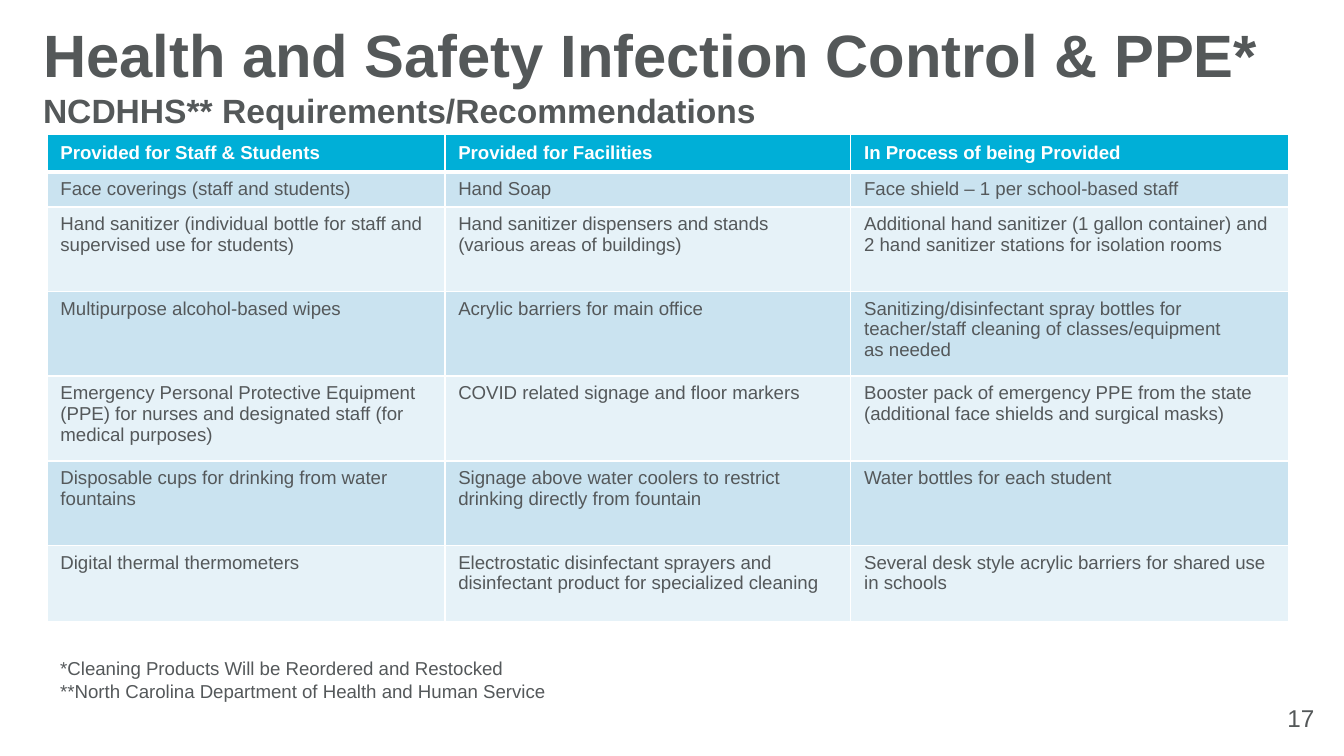
from dataclasses import dataclass

from lxml.etree import SubElement
from pptx import Presentation
from pptx.dml.color import RGBColor
from pptx.enum.text import MSO_ANCHOR, MSO_AUTO_SIZE, PP_ALIGN
from pptx.oxml.ns import qn
from pptx.util import Inches, Pt


@dataclass(frozen=True)
class Theme:
    font: str = "Arial"
    heading: str = "545859"
    body: str = "54585A"
    white: str = "FFFFFF"
    header_fill: str = "00AFD7"
    bands: tuple = ("CAE3F0", "E6F2F8")
    title_size: int = 32
    title_end_size: int = 34
    subtitle_size: int = 18
    body_size: int = 10
    number_size: int = 13


theme = Theme()


def add_text(para, text, size, color, bold=False):
    """Fill a paragraph with one run per line of text."""
    for index, line in enumerate(text.split("\n")):
        if index:
            para.add_line_break()
        span = para.add_run()
        span.text = line
        span.font.name = theme.font
        span.font.size = Pt(size)
        span.font.bold = bold
        span.font.color.rgb = RGBColor.from_string(color)


def set_margins(frame, side, end):
    frame.margin_left = frame.margin_right = Inches(side)
    frame.margin_top = frame.margin_bottom = Inches(end)


deck = Presentation()
deck.slide_width, deck.slide_height = Inches(10), Inches(10 * 9 / 16)
page = deck.slides.add_slide(deck.slide_layouts.get_by_name("Title Only"))

# Title and subtitle
title = page.shapes.title
title.left, title.top = Inches(0.25), Inches(0.25)
title.width, title.height = Inches(9.42), Inches(0.57)
frame = title.text_frame
frame.word_wrap = True
frame.auto_size = MSO_AUTO_SIZE.NONE
frame.vertical_anchor = MSO_ANCHOR.MIDDLE
set_margins(frame, 0.07, 0.04)
title_lines = [
    [("Health and Safety Infection Control & PPE*", theme.title_size),
     (" ", theme.title_end_size)],
    [("NCDHHS** Requirements/Recommendations", theme.subtitle_size)],
]
for index, spans in enumerate(title_lines):
    para = frame.add_paragraph() if index else frame.paragraphs[0]
    para.alignment = PP_ALIGN.LEFT
    for text, size in spans:
        add_text(para, text, size, theme.heading, bold=True)

# Table of supplies: a tuple in a cell holds separate paragraphs
rows = [
    ["Provided for Staff & Students", "Provided for Facilities",
     "In Process of being Provided"],
    ["Face coverings (staff and students)", "Hand Soap",
     "Face shield – 1 per school-based staff"],
    ["Hand sanitizer (individual bottle for staff and supervised use for students)",
     "Hand sanitizer dispensers and stands \n(various areas of buildings)",
     "Additional hand sanitizer (1 gallon container) and "
     "2 hand sanitizer stations for isolation rooms"],
    ["Multipurpose alcohol-based wipes", "Acrylic barriers for main office",
     "Sanitizing/disinfectant spray bottles for "
     "teacher/staff cleaning of classes/equipment \nas needed"],
    ["Emergency Personal Protective Equipment (PPE) for nurses "
     "and designated staff (for medical purposes)",
     "COVID related signage and floor markers",
     ("Booster pack of emergency PPE from the state",
      "(additional face shields and surgical masks)")],
    ["Disposable cups for drinking from water fountains",
     "Signage above water coolers to restrict drinking directly from fountain",
     "Water bottles for each student"],
    ["Digital thermal thermometers",
     "Electrostatic disinfectant sprayers and "
     "disinfectant product for specialized cleaning",
     "Several desk style acrylic barriers for shared use in schools"],
]
column_widths = [2.96, 3.02, 3.26]
row_heights = [0.28, 0.26, 0.63, 0.63, 0.63, 0.63, 0.57]
header_borders = {"a:lnL": 1, "a:lnR": 1, "a:lnT": 1, "a:lnB": 3}
table = page.shapes.add_table(
    len(rows), len(column_widths), Inches(0.35), Inches(1),
    Inches(sum(column_widths)), Inches(sum(row_heights))).table
for column, width in zip(table.columns, column_widths):
    column.width = Inches(width)
for row, height in zip(table.rows, row_heights):
    row.height = Inches(height)
for row_index, contents in enumerate(rows):
    is_header = row_index == 0
    fill = theme.header_fill if is_header else theme.bands[(row_index - 1) % 2]
    for column_index, content in enumerate(contents):
        cell = table.cell(row_index, column_index)
        cell.vertical_anchor = MSO_ANCHOR.MIDDLE if is_header else MSO_ANCHOR.TOP
        set_margins(cell, 0.1, 0.05)
        if is_header:
            properties = cell._tc.get_or_add_tcPr()
            for tag, width in header_borders.items():
                line = SubElement(properties, qn(tag), w=str(Pt(width)))
                solid = SubElement(line, qn("a:solidFill"))
                SubElement(solid, qn("a:srgbClr"), val=theme.white)
        cell.fill.solid()
        cell.fill.fore_color.rgb = RGBColor.from_string(fill)
        frame = cell.text_frame
        texts = content if isinstance(content, tuple) else (content,)
        for index, text in enumerate(texts):
            para = frame.add_paragraph() if index else frame.paragraphs[0]
            add_text(para, text, theme.body_size,
                     theme.white if is_header else theme.body, bold=is_header)

# Footnotes
footnotes = page.shapes.add_textbox(Inches(0.35), Inches(4.84), Inches(9.36), Inches(0.3))
frame = footnotes.text_frame
frame.word_wrap = True
set_margins(frame, 0.1, 0.05)
notes = ["*Cleaning Products Will be Reordered and Restocked",
         "**North Carolina Department of Health and Human Service"]
for index, text in enumerate(notes):
    para = frame.add_paragraph() if index else frame.paragraphs[0]
    add_text(para, text, theme.body_size, theme.body)

# Page number
number = page.shapes.add_textbox(Inches(9.25), Inches(5.19), Inches(0.6), Inches(0.43))
frame = number.text_frame
frame.word_wrap = True
set_margins(frame, 0.07, 0.04)
frame.paragraphs[0].alignment = PP_ALIGN.RIGHT
add_text(frame.paragraphs[0], "17", theme.number_size, theme.heading)

deck.save("out.pptx")
